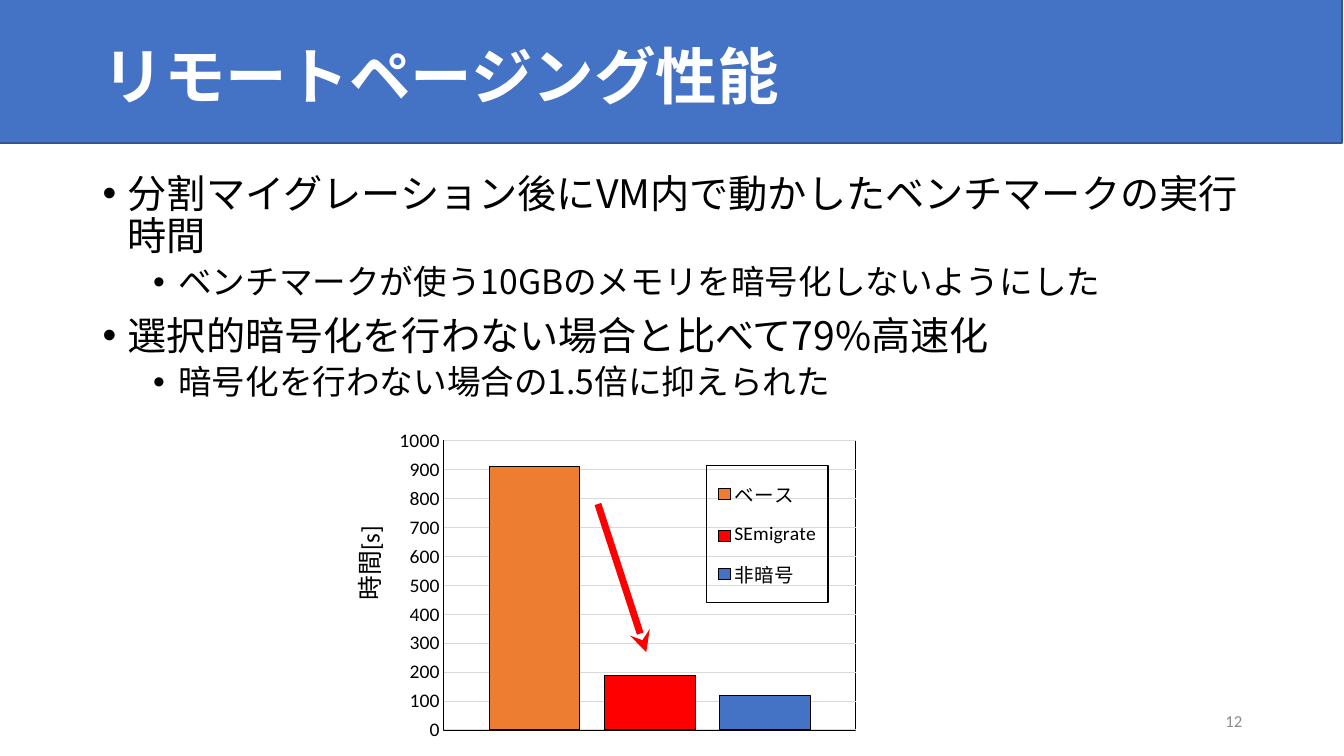
from dataclasses import dataclass

from lxml import etree
from pptx import Presentation
from pptx.chart.chart import Chart
from pptx.chart.data import CategoryChartData
from pptx.dml.color import RGBColor
from pptx.enum.chart import XL_CHART_TYPE, XL_LEGEND_POSITION, XL_TICK_MARK
from pptx.enum.shapes import MSO_CONNECTOR, MSO_SHAPE
from pptx.enum.text import MSO_ANCHOR, PP_ALIGN
from pptx.oxml import parse_xml
from pptx.oxml.ns import nsdecls, qn
from pptx.slide import Slide
from pptx.text.text import Font, TextFrame
from pptx.util import Inches, Pt

COLUMNS = XL_CHART_TYPE.COLUMN_CLUSTERED
LEGEND_RIGHT = XL_LEGEND_POSITION.RIGHT
NO_TICK = XL_TICK_MARK.NONE
STRAIGHT = MSO_CONNECTOR.STRAIGHT
RECTANGLE = MSO_SHAPE.RECTANGLE
MIDDLE = MSO_ANCHOR.MIDDLE
TOP = MSO_ANCHOR.TOP
RIGHT = PP_ALIGN.RIGHT

COLORS = {
    "blue": "4472C4",
    "navy": "325491",
    "orange": "ED7D31",
    "red": "FF0000",
    "black": "000000",
    "white": "FFFFFF",
    "gray": "8C8C8C",
    "grid": "D9D9D9",
}
JAPANESE = "Noto Sans CJK JP"
LATIN = "Calibri"


@dataclass
class Bullet:
    text: str
    level: int = 0


@dataclass
class Bar:
    name: str
    seconds: int
    color: str


BULLETS = [
    Bullet("分割マイグレーション後にVM内で動かしたベンチマークの実行時間"),
    Bullet("ベンチマークが使う10GBのメモリを暗号化しないようにした", 1),
    Bullet("選択的暗号化を行わない場合と比べて79%高速化"),
    Bullet("暗号化を行わない場合の1.5倍に抑えられた", 1),
]
BARS = [
    Bar("ベース", 910, "orange"),
    Bar("SEmigrate", 190, "red"),
    Bar("非暗号", 120, "blue"),
]


def color(name: str) -> RGBColor:
    return RGBColor.from_string(COLORS[name])


def set_font(font: Font, size: float, color_name: str, face: str, bold: bool = False) -> None:
    font.size = Pt(size)
    font.bold = bold
    font.color.rgb = color(color_name)
    font.name = face


def add_text_frame(slide: Slide, left: float, top: float, width: float, height: float,
                   anchor: MSO_ANCHOR) -> TextFrame:
    box = slide.shapes.add_textbox(Inches(left), Inches(top), Inches(width), Inches(height))
    frame = box.text_frame
    frame.word_wrap = True
    frame.vertical_anchor = anchor
    return frame


def add_header(slide: Slide) -> None:
    band = slide.shapes.add_shape(RECTANGLE, Inches(-0.02), Inches(-0.01), Inches(13.33), Inches(1.43))
    band.shadow.inherit = False
    band.fill.solid()
    band.fill.fore_color.rgb = color("blue")
    band.line.color.rgb = color("navy")
    band.line.width = Pt(1)

    paragraph = add_text_frame(slide, 0.92, 0.07, 11.5, 1.44, MIDDLE).paragraphs[0]
    paragraph.text = "リモートページング性能"
    paragraph.line_spacing = 0.9
    set_font(paragraph.font, 44, "white", JAPANESE, True)


def add_bullets(slide: Slide) -> None:
    frame = add_text_frame(slide, 0.92, 1.68, 11.5, 5.07, TOP)
    for index, bullet in enumerate(BULLETS):
        paragraph = frame.add_paragraph() if index else frame.paragraphs[0]
        paragraph.text = bullet.text
        paragraph.level = bullet.level
        paragraph.line_spacing = 0.9
        paragraph.space_before = Pt(5 if bullet.level else 10)
        set_font(paragraph.font, 24 if bullet.level else 28, "black", JAPANESE)
        properties = paragraph.font._element.getparent()
        properties.set("marL", str(Inches(0.25 + 0.5 * bullet.level)))
        properties.set("indent", str(Inches(-0.25)))
        marks = [
            f'<a:buFont {nsdecls("a")} typeface="Arial"/>',
            f'<a:buChar {nsdecls("a")} char="•"/>',
        ]
        for mark in marks:
            paragraph.font._element.addprevious(parse_xml(mark))


def place(element: etree._Element, **numbers: float) -> None:
    """Give a chart part a fixed place, as fractions of the chart."""
    for old_layout in element.findall(qn("c:layout")):
        element.remove(old_layout)
    layout = parse_xml(f'<c:layout {nsdecls("c")}><c:manualLayout/></c:layout>')
    manual = layout[0]
    if element.tag == qn("c:plotArea"):
        etree.SubElement(manual, qn("c:layoutTarget")).set("val", "inner")
    for axis in "xy":
        etree.SubElement(manual, qn(f"c:{axis}Mode")).set("val", "edge")
    for key, value in numbers.items():
        etree.SubElement(manual, qn(f"c:{key}")).set("val", str(value))
    element.insert(0 if element.tag == qn("c:plotArea") else 1, layout)


def outline(fill: str) -> etree._Element:
    return parse_xml(
        f'<c:spPr {nsdecls("c", "a")}>{fill}<a:ln w="{Pt(0.75)}"><a:solidFill>'
        f'<a:srgbClr val="{COLORS["black"]}"/></a:solidFill></a:ln></c:spPr>'
    )


def style_axes(chart: Chart) -> None:
    chart.category_axis.visible = False
    axis = chart.value_axis
    axis.minimum_scale, axis.maximum_scale, axis.major_unit = 0, 1000, 100
    axis.major_tick_mark = NO_TICK
    axis.format.line.fill.background()
    axis.major_gridlines.format.line.color.rgb = color("grid")
    axis.major_gridlines.format.line.width = Pt(0.75)
    set_font(axis.tick_labels.font, 14, "black", LATIN)
    paragraph = axis.axis_title.text_frame.paragraphs[0]
    paragraph.text = "時間[s]"
    set_font(paragraph.font, 18, "black", LATIN)
    body = axis.axis_title._element.find(f'.//{qn("a:bodyPr")}')
    body.set("rot", "-5400000")
    body.set("vert", "horz")
    place(axis.axis_title._element, x=0.04, y=0.31)


def add_time_chart(slide: Slide) -> None:
    data = CategoryChartData()
    data.categories = ["1"]
    for bar in BARS:
        data.add_series(bar.name, [bar.seconds])
    chart = slide.shapes.add_chart(
        COLUMNS, Inches(3.17), Inches(4.22), Inches(5.73), Inches(3.14), data).chart
    chart.has_title = False
    set_font(chart.font, 10, "black", LATIN)
    style_axes(chart)

    # Columns
    plot = chart.plots[0]
    plot.gap_width, plot.overlap = 100, -27
    plot.vary_by_categories = False
    for bar, series in zip(BARS, plot.series):
        series.format.fill.solid()
        series.format.fill.fore_color.rgb = color(bar.color)
        series.format.line.color.rgb = color("black")
        series.format.line.width = Pt(0.75)
    plot_area = chart._chartSpace.chart.plotArea
    place(plot_area, x=0.215, y=0.05, w=0.713, h=0.931)
    plot_area.append(outline("<a:noFill/>"))

    # Legend
    chart.has_legend = True
    legend = chart.legend
    legend.position = LEGEND_RIGHT
    legend.include_in_layout = False
    set_font(legend.font, 14, "black", LATIN)
    place(legend._element, x=0.67, y=0.13, w=0.21, h=0.44)
    legend._element.find(qn("c:txPr")).addprevious(outline("<a:noFill/>"))


def add_drop_arrow(slide: Slide) -> None:
    arrow = slide.shapes.add_connector(STRAIGHT, Inches(5.93), Inches(5), Inches(6.41), Inches(6.47))
    arrow.line.color.rgb = color("red")
    arrow.line.width = Pt(5)
    etree.SubElement(arrow.line._get_or_add_ln(), qn("a:tailEnd")).set("type", "stealth")
    etree.SubElement(arrow._element.spPr, qn("a:effectLst"))


def add_page_number(slide: Slide) -> None:
    paragraph = add_text_frame(slide, 9.42, 6.95, 3, 0.4, MIDDLE).paragraphs[0]
    paragraph.text = "12"
    paragraph.alignment = RIGHT
    set_font(paragraph.font, 12, "gray", LATIN)


def main() -> None:
    presentation = Presentation()
    presentation.slide_width, presentation.slide_height = Inches(13.33), Inches(7.5)
    slide = presentation.slides.add_slide(presentation.slide_layouts[6])
    add_header(slide)
    add_bullets(slide)
    add_time_chart(slide)
    add_drop_arrow(slide)
    add_page_number(slide)
    presentation.save("out.pptx")


if __name__ == "__main__":
    main()
